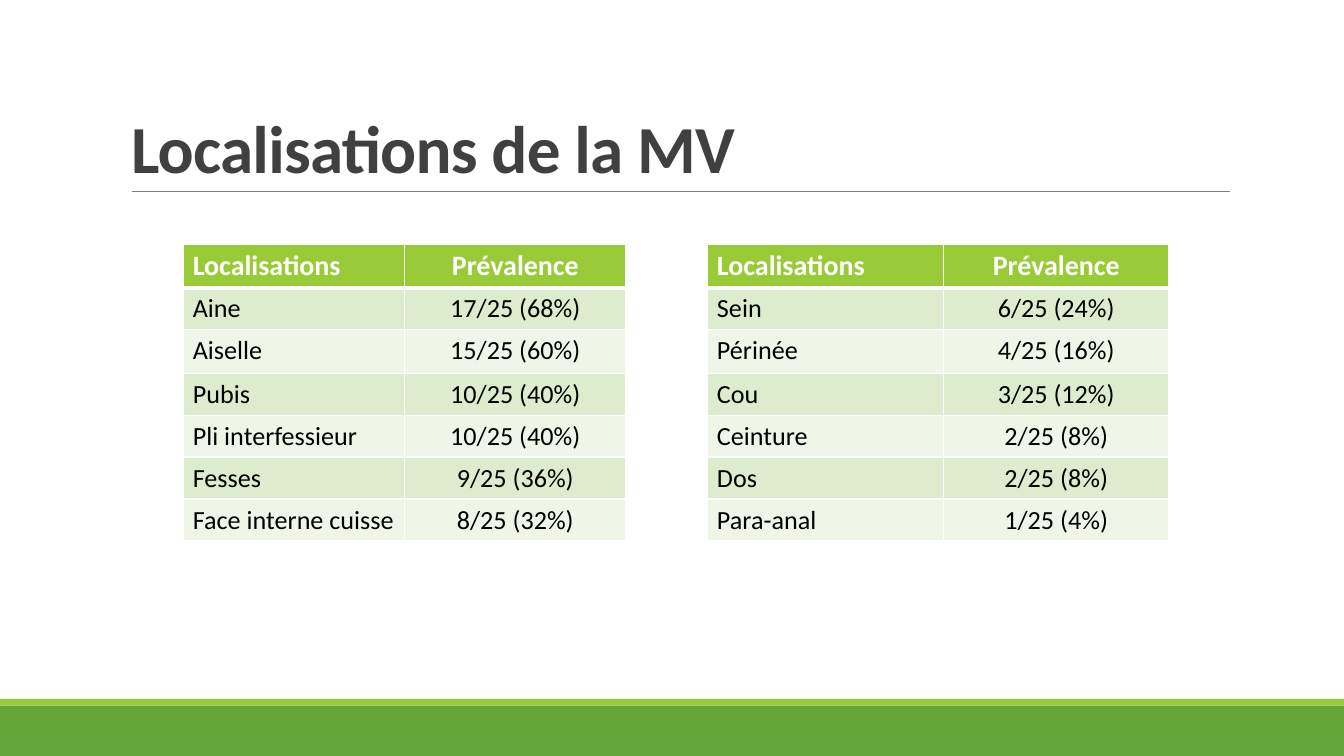
from lxml.etree import SubElement
from pptx import Presentation
from pptx.dml.color import RGBColor
from pptx.enum.shapes import MSO_CONNECTOR as Connector, MSO_SHAPE as Shape
from pptx.enum.text import MSO_ANCHOR as Anchor, PP_ALIGN as Align
from pptx.oxml.ns import qn
from pptx.util import Pt

TITLE = "Localisations de la MV"
HEADER = ("Localisations", "Prévalence")
LEFT_ROWS = [
    ("Aine", "17/25 (68%)"),
    ("Aiselle", "15/25 (60%)"),
    ("Pubis", "10/25 (40%)"),
    ("Pli interfessieur", "10/25 (40%)"),
    ("Fesses", "9/25 (36%)"),
    ("Face interne cuisse", "8/25 (32%)"),
]
RIGHT_ROWS = [
    ("Sein", "6/25 (24%)"),
    ("Périnée", "4/25 (16%)"),
    ("Cou", "3/25 (12%)"),
    ("Ceinture", "2/25 (8%)"),
    ("Dos", "2/25 (8%)"),
    ("Para-anal", "1/25 (4%)"),
]
ROWS = [(*left, "", *right) for left, right in
        zip([HEADER, *LEFT_ROWS], [HEADER, *RIGHT_ROWS])]

FONT = "Calibri"
WHITE, LIME, GREEN = "FFFFFF", "99CB38", "63A537"
BAND_FILLS = ("EFF6E8", "DEECCE")
WIDTH, HEIGHT = 720, 405
BANDS = [(378, 27, GREEN), (374.4, 3.6, LIME)]  # top, height, colour
COLUMN_WIDTHS = (118.8, 118.8, 43.2, 126.7, 121)
ROW_HEIGHTS = (23.5, 22, 23.5, 22.5, 22.5, 22.5, 22.5)
TABLE_LEFT, TABLE_TOP = 97.9, 130.8
GAP_COLUMN = 2
CENTRED_COLUMNS = (1, 4)
SIDE_INSET, END_INSET = Pt(5.4), Pt(2.7)


def colour(hex_string):
    return RGBColor.from_string(hex_string)


def set_fill(target, hex_string):
    target.fill.solid()
    target.fill.fore_color.rgb = colour(hex_string)


def set_font(paragraph, size, hex_string, bold):
    font = paragraph.font
    font.name, font.size, font.bold = FONT, Pt(size), bold
    font.color.rgb = colour(hex_string)


def set_insets(target):
    target.margin_left = target.margin_right = SIDE_INSET
    target.margin_top = target.margin_bottom = END_INSET


def add_borders(cell, row):
    """White rules, thicker between the header and the body."""
    properties = cell._tc.get_or_add_tcPr()
    widths = {"lnL": 1, "lnR": 1, "lnT": 3 if row == 1 else 1, "lnB": 3 if row == 0 else 1}
    for tag, width in widths.items():
        line = SubElement(properties, qn(f"a:{tag}"), w=str(Pt(width)))
        fill = SubElement(line, qn("a:solidFill"))
        SubElement(fill, qn("a:srgbClr"), val=WHITE)


def add_bands(slide):
    for top, height, fill in BANDS:
        band = slide.shapes.add_shape(Shape.RECTANGLE, 0, Pt(top), Pt(WIDTH), Pt(height))
        band.shadow.inherit = False
        set_fill(band, fill)
        band.line.fill.background()


def add_title(slide):
    rule = slide.shapes.add_connector(Connector.STRAIGHT, Pt(70.6), Pt(102.6), Pt(658.8), Pt(102.6))
    rule.line.color.rgb = colour("808080")
    rule.line.width = Pt(0.5)
    SubElement(rule._element.spPr, qn("a:effectLst"))

    frame = slide.shapes.add_textbox(Pt(64.8), Pt(17.3), Pt(594), Pt(85.7)).text_frame
    frame.word_wrap = True
    frame.vertical_anchor = Anchor.BOTTOM
    set_insets(frame)
    paragraph = frame.paragraphs[0]
    paragraph.text = TITLE
    paragraph.line_spacing = 0.85
    set_font(paragraph, 36, "404040", True)
    paragraph.runs[0]._r.get_or_add_rPr().set("spc", "-40")


def fill_cell(cell, text, row, column):
    is_header, is_gap = row == 0, column == GAP_COLUMN
    set_insets(cell)
    add_borders(cell, row)
    set_fill(cell, WHITE if is_gap else LIME if is_header else BAND_FILLS[row % 2])
    paragraph = cell.text_frame.paragraphs[0]
    if is_gap:
        # An empty paragraph takes its height from its end mark.
        SubElement(paragraph._p, qn("a:endParaRPr"), sz="1400")
        return
    paragraph.text = text
    paragraph.alignment = Align.CENTER if column in CENTRED_COLUMNS else Align.LEFT
    set_font(paragraph, 15 if is_header else 14, WHITE if is_header else "000000", is_header)


def add_prevalence_table(slide):
    table = slide.shapes.add_table(
        len(ROWS), len(COLUMN_WIDTHS), Pt(TABLE_LEFT), Pt(TABLE_TOP),
        Pt(sum(COLUMN_WIDTHS)), Pt(sum(ROW_HEIGHTS))).table
    for column, width in zip(table.columns, COLUMN_WIDTHS):
        column.width = Pt(width)
    for row, height in zip(table.rows, ROW_HEIGHTS):
        row.height = Pt(height)
    for row, texts in enumerate(ROWS):
        for column, text in enumerate(texts):
            fill_cell(table.cell(row, column), text, row, column)


def main():
    presentation = Presentation()
    presentation.slide_width, presentation.slide_height = Pt(WIDTH), Pt(HEIGHT)
    slide = presentation.slides.add_slide(presentation.slide_layouts[6])
    set_fill(slide.background, WHITE)
    add_bands(slide)
    add_title(slide)
    add_prevalence_table(slide)
    presentation.save("out.pptx")


if __name__ == "__main__":
    main()
